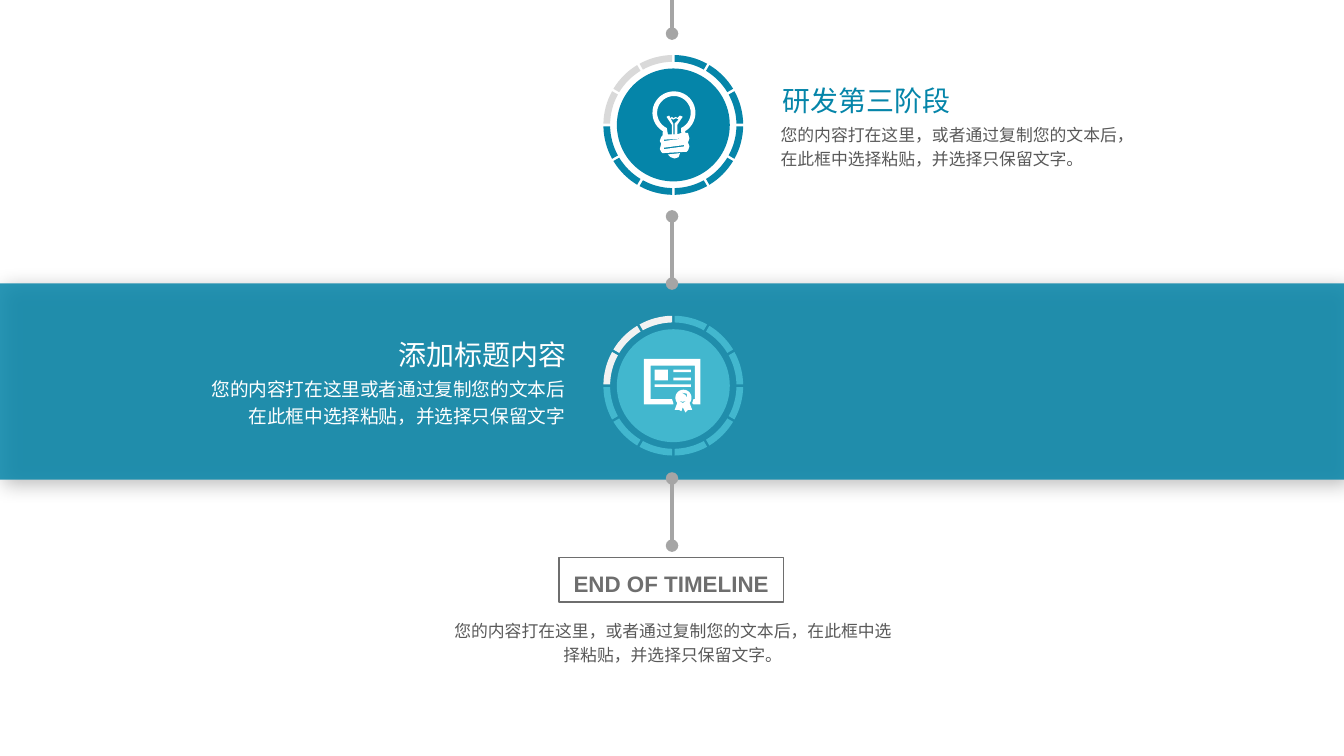
from math import asin, cos, degrees, radians, sin

from lxml import etree
from pptx import Presentation
from pptx.dml.color import RGBColor
from pptx.enum.shapes import MSO_CONNECTOR, MSO_SHAPE
from pptx.enum.text import MSO_ANCHOR, MSO_AUTO_SIZE, PP_ALIGN
from pptx.oxml.ns import qn
from pptx.util import Inches, Pt

RECT, OVAL, STRAIGHT = MSO_SHAPE.RECTANGLE, MSO_SHAPE.OVAL, MSO_CONNECTOR.STRAIGHT
LEFT, CENTER, RIGHT = PP_ALIGN.LEFT, PP_ALIGN.CENTER, PP_ALIGN.RIGHT
TOP, MIDDLE = MSO_ANCHOR.TOP, MSO_ANCHOR.MIDDLE
GROW = MSO_AUTO_SIZE.SHAPE_TO_FIT_TEXT

TEAL, AQUA, WHITE, GRAY, DARK, STEEL = "0585A9", "42B7CE", "FFFFFF", "595959", "6E6E6E", "A5A5A5"
BODY_FONT, TITLE_FONT = "Noto Sans CJK SC", "Arial"
ADVICE = "您的内容打在这里，或者通过复制您的文本后，在此框中选择粘贴，并选择只保留文字。"
SHORT_ADVICE = "您的内容打在这里或者通过复制您的文本后在此框中选择粘贴，并选择只保留文字"

BODY = {"size": Pt(9), "name": BODY_FONT, "bold": False}
BAND_BODY = {**BODY, "size": Pt(10)}
TITLE = {"size": Pt(15), "name": TITLE_FONT, "bold": False}
ENDING = {"size": Pt(12), "name": TITLE_FONT, "bold": True}

BODY_FRAME = {"word_wrap": True, "vertical_anchor": TOP}
TIGHT = {"margin_left": Inches(0.03), "margin_right": Inches(0.03),
         "margin_top": Inches(0.04), "margin_bottom": Inches(0.04)}
TITLE_FRAME = {**TIGHT, "word_wrap": False, "vertical_anchor": TOP}
ENDING_FRAME = {**TIGHT, "word_wrap": True, "vertical_anchor": MIDDLE}

TEXTS = [
    ((5.71, 0.85, 2.86, 0.46), ADVICE, BODY, GRAY, BODY_FRAME, LEFT, 1.2),
    ((5.79, 0.58, 1.32, 0.33), "研发第三阶段", TITLE, TEAL, TITLE_FRAME, CENTER, 1.0),
    ((1.44, 2.73, 2.86, 0.5), SHORT_ADVICE, BAND_BODY, WHITE, BODY_FRAME, RIGHT, 1.2),
    ((2.93, 2.47, 1.32, 0.33), "添加标题内容", TITLE, WHITE, TITLE_FRAME, CENTER, 1.0),
    ((3.24, 4.54, 3.53, 0.46), ADVICE, BODY, GRAY, BODY_FRAME, CENTER, 1.2),
]
END_BOX = (4.16, 4.15, 1.67, 0.33)
BAND = (0, 2.11, 10, 1.46)
LINKS = [(0, 0.25, ["tailEnd"]), (1.61, 2.11, ["headEnd", "tailEnd"]),
         (3.56, 4.06, ["headEnd", "tailEnd"])]

AXIS, DIAL_X = 5, 5.01
SEGMENTS, DONE = 12, 9
RING_OUTER, RING_INNER, DISC, HALF_GAP = 0.52, 0.47, 0.42, 0.01


def arc(cx, cy, radius, start, end, steps=8):
    angles = [radians(start + (end - start) * i / steps) for i in range(steps + 1)]
    return [(cx + radius * sin(a), cy - radius * cos(a)) for a in angles]


def box(left, top, right, bottom):
    return [(left, top), (right, top), (right, bottom), (left, bottom)]


BULB = [
    arc(5.015, 0.84, 0.16, -149, 149, 32) + [
        (5.1, 0.99), (5.12, 0.99), (5.13, 1.03), (5.12, 1.06), (5.13, 1.09), (5.12, 1.12),
        (5.11, 1.13), (4.93, 1.14), (4.92, 1.13), (4.91, 1.11), (4.92, 1.07), (4.91, 1.05),
        (4.92, 1.02), (4.93, 1.01)],
    arc(5.015, 0.84, 0.125, 155, -155, 32) + [
        (4.97, 1), (5, 1), (5, 0.93), (4.96, 0.87), (4.98, 0.86), (4.99, 0.88), (5, 0.87),
        (5.01, 0.88), (5.03, 0.87), (5.04, 0.88), (5.06, 0.86), (5.08, 0.87), (5.04, 0.93),
        (5.04, 1), (5.07, 0.99)],
    [(5.05, 0.89), (5.03, 0.88), (5.01, 0.89), (4.99, 0.88), (5.01, 0.92), (5.01, 1),
     (5.02, 1), (5.02, 0.92)],
    [(5.06, 1.14), (4.97, 1.15), (4.99, 1.17), (5.02, 1.18), (5.05, 1.17)],
    [(5.09, 1.08), (4.94, 1.1), (4.94, 1.11), (5.09, 1.09)],
    [(5.09, 1.03), (4.94, 1.04), (4.94, 1.05), (5.09, 1.03)],
]
CERTIFICATE = [
    [(4.79, 2.67), (5.21, 2.67), (5.21, 3.01), (5.16, 3.01), (5.15, 3), (5.16, 2.97),
     (5.17, 2.97), (5.17, 2.72), (4.84, 2.72), (4.84, 2.97), (5, 2.97), (5.01, 3),
     (5.01, 3.01), (4.79, 3.01)],
    arc(5.085, 2.96, 0.06, -130, 130, 20) + [
        (5.15, 3.05), (5.12, 3.05), (5.1, 3.07), (5.08, 3.03), (5.07, 3.06), (5.05, 3.05),
        (5.02, 3.05)],
    [(5.11, 2.98), (5.08, 2.99), (5.05, 2.98), (5.08, 3)],
    [(5.07, 2.92), (5.1, 2.94), (5.11, 2.96), (5.11, 2.93)],
    box(4.87, 2.86, 5.14, 2.88),
    box(5.01, 2.81, 5.14, 2.83),
    box(5.01, 2.75, 5.14, 2.77),
    box(4.87, 2.75, 4.97, 2.83),
]
DIALS = [(0.93, TEAL, "D9D9D9", BULB), (2.87, AQUA, "F2F2F2", CERTIFICATE)]


def rgb(value):
    return RGBColor.from_string(value)


def inches(values):
    return [Inches(v) for v in values]


def paint(shape, color):
    shape.shadow.inherit = False
    shape.fill.solid()
    shape.fill.fore_color.rgb = rgb(color)
    shape.line.fill.background()


def draw_outline(shapes, contours, color):
    points = [[inches(point) for point in contour] for contour in contours]
    builder = shapes.build_freeform(*points[0][0], scale=1.0)
    for i, contour in enumerate(points):
        if i:
            builder.move_to(*contour[0])
        builder.add_line_segments(contour[1:], close=True)
    paint(builder.convert_to_shape(), color)


def write(shape, text, font, color, frame_format, align, spacing):
    frame = shape.text_frame
    for key, value in {**frame_format, "auto_size": GROW}.items():
        setattr(frame, key, value)
    paragraph = frame.paragraphs[0]
    paragraph.alignment, paragraph.line_spacing = align, spacing
    run = paragraph.add_run()
    run.text = text
    for key, value in font.items():
        setattr(run.font, key, value)
    run.font.color.rgb = rgb(color)


def add_node(parent, tag, **attributes):
    return etree.SubElement(parent, qn(tag), attributes)


def draw_band(shapes):
    band = shapes.add_shape(RECT, *inches(BAND))
    paint(band, TEAL)
    properties = band.element.spPr
    add_node(properties.find(".//" + qn("a:srgbClr")), "a:alpha", val="85000")
    shadow = add_node(properties.find(qn("a:effectLst")), "a:outerShdw", blurRad=str(Pt(10)),
                      dist=str(Pt(3)), dir="2700000", algn="tl", rotWithShape="0")
    add_node(add_node(shadow, "a:srgbClr", val="000000"), "a:alpha", val="30000")


def draw_dial(shapes, center_y, color, rest, icon):
    dial = shapes.add_group_shape().shapes
    disc = dial.add_shape(OVAL, *inches((DIAL_X - DISC, center_y - DISC, 2 * DISC, 2 * DISC)))
    paint(disc, color)
    step = 360 / SEGMENTS
    outer_gap, inner_gap = (degrees(asin(HALF_GAP / r)) for r in (RING_OUTER, RING_INNER))
    for i in range(SEGMENTS):
        start, end = i * step, (i + 1) * step
        segment = (arc(DIAL_X, center_y, RING_OUTER, start + outer_gap, end - outer_gap)
                   + arc(DIAL_X, center_y, RING_INNER, end - inner_gap, start + inner_gap))
        draw_outline(dial, [segment], color if i < DONE else rest)
    draw_outline(dial, icon, WHITE)


def draw_link(shapes, start, end, dots):
    link = shapes.add_connector(STRAIGHT, *inches((AXIS, start, AXIS, end)))
    link.line.color.rgb, link.line.width = rgb(STEEL), Pt(2.25)
    properties = link.element.spPr
    for dot in dots:
        add_node(properties.find(qn("a:ln")), "a:" + dot, type="oval")
    add_node(properties, "a:effectLst")


def main():
    deck = Presentation()
    deck.slide_width = Inches(10)
    deck.slide_height = deck.slide_width * 9 // 16
    shapes = deck.slides.add_slide(deck.slide_layouts[6]).shapes
    draw_band(shapes)
    for dial in DIALS:
        draw_dial(shapes, *dial)
    for place, *content in TEXTS:
        write(shapes.add_textbox(*inches(place)), *content)
    end_box = shapes.add_shape(RECT, *inches(END_BOX))
    end_box.shadow.inherit = False
    end_box.fill.background()
    end_box.line.color.rgb, end_box.line.width = rgb(DARK), Pt(0.75)
    write(end_box, "END OF TIMELINE", ENDING, DARK, ENDING_FRAME, CENTER, 1.25)
    for link in LINKS:
        draw_link(shapes, *link)
    deck.save("out.pptx")


if __name__ == "__main__":
    main()
